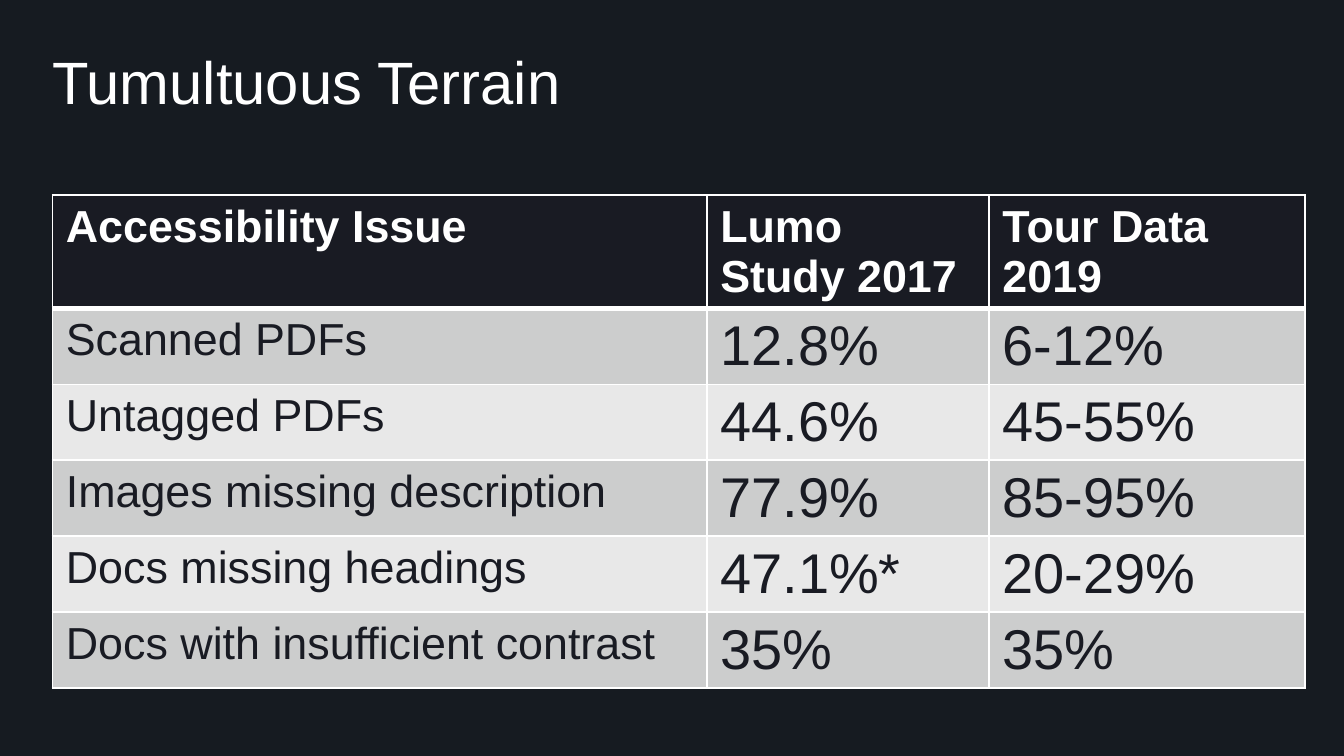
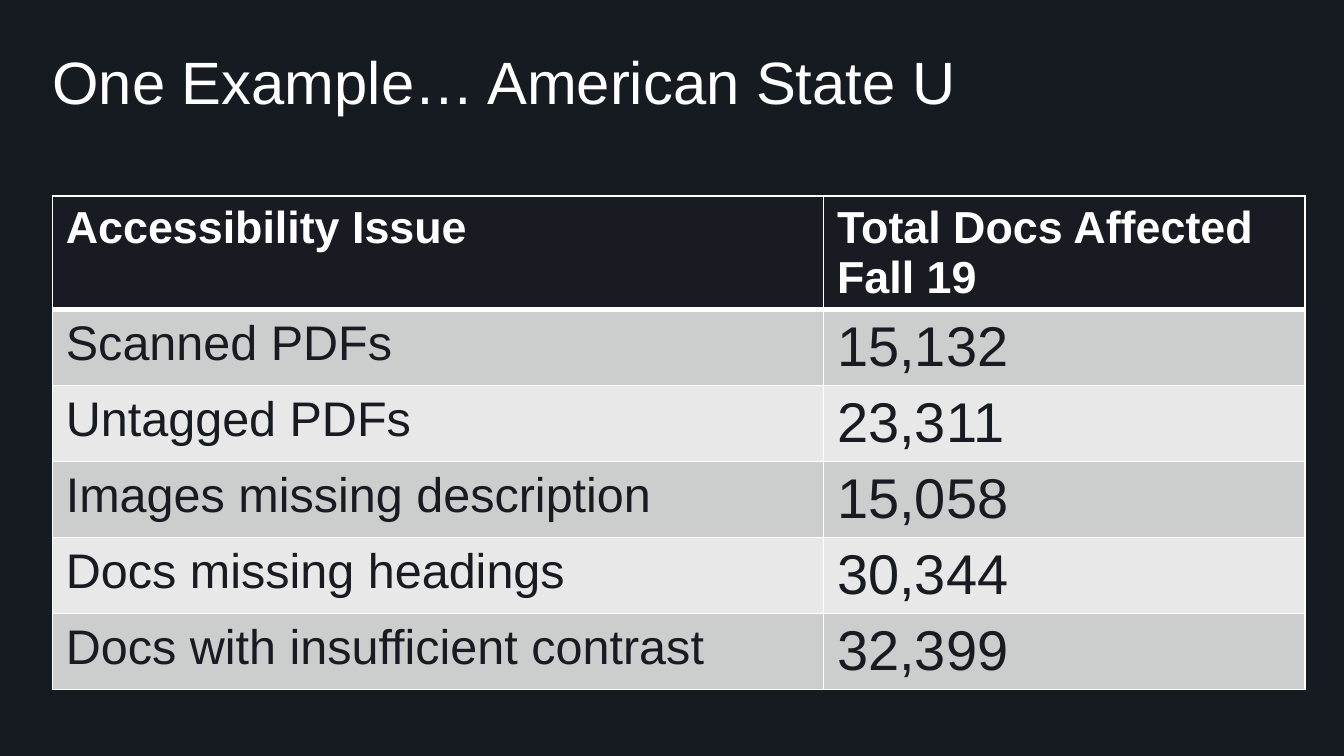
"""Build two dark slides that tabulate accessibility issues."""
import lxml.etree
import pptx
import pptx.dml.color
import pptx.enum.text
import pptx.oxml.ns
import pptx.util

FONT = "Arial"
BACKGROUND = "161B21"
WHITE = "FFFFFF"
INK = "191B23"
BANDS = ("CCCDCD", "E8E8E8")
LEFT = 28.1
CONTENT_WIDTH = 671
HEADER_HEIGHT = 60.8
ROW_HEIGHT = 40.7
HEADER_SIZE = 24
VALUE_SIZE = 30
TITLE_ONLY = 5

ISSUES = (
    "Scanned PDFs",
    "Untagged PDFs",
    "Images missing description",
    "Docs missing headings",
    "Docs with insufficient contrast",
)
STUDY_RATES = ("12.8%", "44.6%", "77.9%", "47.1%*", "35%")
TOUR_RATES = ("6-12%", "45-55%", "85-95%", "20-29%", "35%")
AFFECTED_DOCS = ("15,132", "23,311", "15,058", "30,344", "32,399")


def color(hex_code):
    """Turn a hex string into a colour."""
    return pptx.dml.color.RGBColor.from_string(hex_code)


def paint(fill, hex_code):
    """Make a fill solid in one colour."""
    fill.solid()
    fill.fore_color.rgb = color(hex_code)


def add_run(paragraph, wording, size, hex_code, bold=False):
    """Add one formatted run to a paragraph."""
    run = paragraph.add_run()
    run.text = wording
    run.font.name = FONT
    run.font.size = pptx.util.Pt(size)
    run.font.bold = bold
    run.font.color.rgb = color(hex_code)


def add_titled_slide(deck, wording):
    """Add a slide with its title at the top left."""
    slide = deck.slides.add_slide(deck.slide_layouts[TITLE_ONLY])
    title = slide.shapes.title
    title.left, title.top = pptx.util.Pt(LEFT), pptx.util.Pt(28.1)
    title.width, title.height = pptx.util.Pt(CONTENT_WIDTH), pptx.util.Pt(45.4)
    frame = title.text_frame
    frame.margin_left = frame.margin_right = 0
    frame.margin_top = frame.margin_bottom = 0
    frame.word_wrap = True
    frame.auto_size = pptx.enum.text.MSO_AUTO_SIZE.NONE
    frame.vertical_anchor = pptx.enum.text.MSO_ANCHOR.TOP
    heading = frame.paragraphs[0]
    heading.alignment = pptx.enum.text.PP_ALIGN.LEFT
    heading.line_spacing = 0.9
    add_run(heading, wording, 32, WHITE)
    return slide


def add_borders(cell, top, bottom):
    """Draw white borders around a cell, with the given top and bottom widths."""
    qn = pptx.oxml.ns.qn
    properties = cell._tc.get_or_add_tcPr()
    for side, width in (("L", 1), ("R", 1), ("T", top), ("B", bottom)):
        border = lxml.etree.SubElement(
            properties, qn("a:ln" + side), w=str(int(pptx.util.Pt(width)))
        )
        solid = lxml.etree.SubElement(border, qn("a:solidFill"))
        lxml.etree.SubElement(solid, qn("a:srgbClr"), val=WHITE)


def add_issue_table(slide, top, widths, headers, value_columns, issue_size):
    """Add a table with a dark header, banded rows and issues in the first column."""
    rows = [headers, *zip(ISSUES, *value_columns)]
    height = HEADER_HEIGHT + ROW_HEIGHT * len(ISSUES)
    table = slide.shapes.add_table(
        len(rows), len(headers), pptx.util.Pt(LEFT), pptx.util.Pt(top),
        pptx.util.Pt(CONTENT_WIDTH), pptx.util.Pt(height),
    ).table
    for column, width in zip(table.columns, widths):
        column.width = pptx.util.Pt(width)
    for row_index, wordings in enumerate(rows):
        is_header = row_index == 0
        row = table.rows[row_index]
        row.height = pptx.util.Pt(HEADER_HEIGHT if is_header else ROW_HEIGHT)
        for column_index, wording in enumerate(wordings):
            cell = row.cells[column_index]
            add_borders(cell, 3 if row_index == 1 else 1, 3 if is_header else 1)
            paragraph = cell.text_frame.paragraphs[0]
            if is_header:
                paint(cell.fill, INK)
                add_run(paragraph, wording, HEADER_SIZE, WHITE, bold=True)
            else:
                paint(cell.fill, BANDS[(row_index - 1) % 2])
                size = VALUE_SIZE if column_index else issue_size
                add_run(paragraph, wording, size, INK)


def main():
    """Build and save the deck."""
    deck = pptx.Presentation()
    deck.slide_width, deck.slide_height = pptx.util.Pt(720), pptx.util.Pt(405)
    paint(deck.slide_master.background.fill, BACKGROUND)

    terrain = add_titled_slide(deck, "Tumultuous Terrain")
    add_issue_table(
        terrain, 104.4, (350.6, 151.2, 169.2),
        ("Accessibility Issue", "Lumo Study 2017", "Tour Data 2019"),
        (STUDY_RATES, TOUR_RATES), 24,
    )

    example = add_titled_slide(deck, "One Example… American State U")
    add_issue_table(
        example, 105.1, (413.2, 257.8),
        ("Accessibility Issue", "Total Docs Affected Fall 19"),
        (AFFECTED_DOCS,), 26,
    )

    deck.save("out.pptx")


if __name__ == "__main__":
    main()
